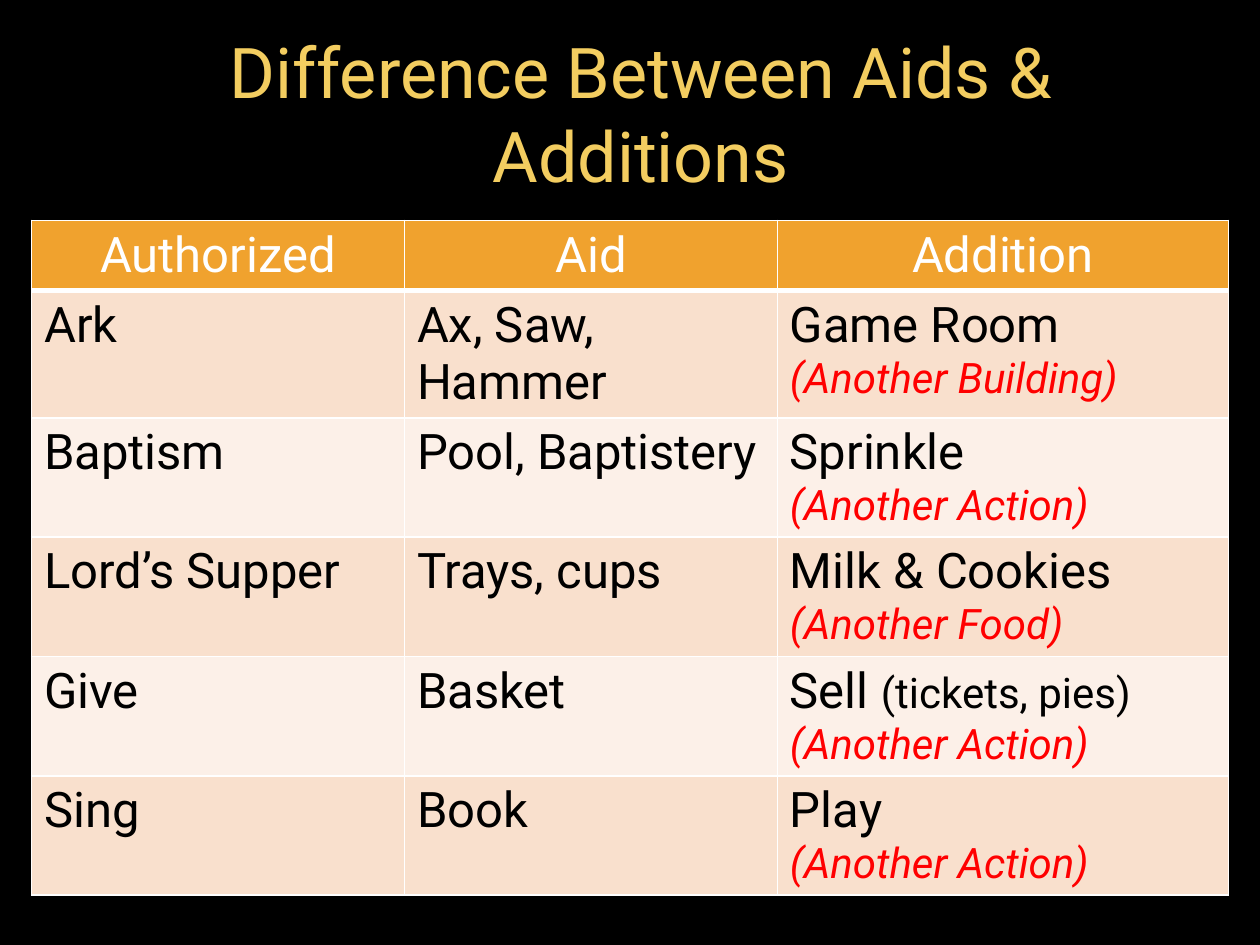
from dataclasses import dataclass

from lxml.etree import SubElement
from pptx import Presentation
from pptx.dml.color import RGBColor as RGB
from pptx.enum.text import MSO_ANCHOR as ANCHOR, MSO_AUTO_SIZE as FIT, PP_ALIGN as ALIGN
from pptx.oxml.ns import qn
from pptx.util import Inches, Pt


@dataclass(frozen=True)
class Theme:
    """Colours, font and type sizes of the slide."""
    font: str = "Roboto"
    back: str = "000000"
    title: str = "F3CD60"
    header: str = "F0A22E"
    bands: tuple = ("F9E0CD", "FCF0E8")
    light: str = "FFFFFF"
    dark: str = "000000"
    accent: str = "FF0000"
    title_size: int = 40
    body_size: int = 28
    note_size: int = 24


THEME = Theme()
TITLE = "Difference Between Aids & Additions"
HEADERS = ("Authorized", "Aid", "Addition")
ROWS = (
    ("Ark", "Ax, Saw, Hammer", "Game Room", "", "(Another Building)"),
    ("Baptism", "Pool, Baptistery", "Sprinkle", "", "(Another Action)"),
    ("Lord’s Supper", "Trays, cups", "Milk & Cookies", "", "(Another Food)"),
    ("Give", "Basket", "Sell ", "(tickets, pies)", "(Another Action)"),
    ("Sing", "Book", "Play", "", "(Another Action)"),
)
COL_WIDTHS = (2.96, 2.96, 3.58)
ROW_HEIGHTS = (0.54, 0.99) + (0.93,) * 4


def add_run(p, text, size, color, italic=False):
    """Append a formatted run to a paragraph."""
    r = p.add_run()
    r.text = text
    r.font.name, r.font.size = THEME.font, Pt(size)
    r.font.bold, r.font.italic = False, italic
    r.font.color.rgb = RGB.from_string(color)


def style_cell(cell, fill, bottom=1):
    """Give a cell its white borders and its fill."""
    tc_pr = cell._tc.get_or_add_tcPr()
    for side, width in (("L", 1), ("R", 1), ("T", 1), ("B", bottom)):
        ln = SubElement(tc_pr, qn(f"a:ln{side}"), w=str(Pt(width)))
        SubElement(SubElement(ln, qn("a:solidFill")), qn("a:srgbClr"), val=THEME.light)
    cell.fill.solid()
    cell.fill.fore_color.rgb = RGB.from_string(fill)


def add_title(s, box):
    """Place the centred title in the box."""
    tf = s.shapes.add_textbox(*box).text_frame
    tf.word_wrap, tf.auto_size = True, FIT.SHAPE_TO_FIT_TEXT
    tf.vertical_anchor = ANCHOR.MIDDLE
    p = tf.paragraphs[0]
    p.alignment = ALIGN.CENTER
    add_run(p, TITLE, THEME.title_size, THEME.title)


def add_comparison(s, box):
    """Place the comparison table, sharing the box by column and row weights."""
    left, top, width, height = box
    table = s.shapes.add_table(len(ROW_HEIGHTS), len(COL_WIDTHS), *box).table
    for col, share in zip(table.columns, COL_WIDTHS):
        col.width = int(width * share / sum(COL_WIDTHS))
    for row, share in zip(table.rows, ROW_HEIGHTS):
        row.height = int(height * share / sum(ROW_HEIGHTS))
    for cell, text in zip(table.rows[0].cells, HEADERS):
        style_cell(cell, THEME.header, bottom=3)
        p = cell.text_frame.paragraphs[0]
        p.alignment = ALIGN.CENTER
        add_run(p, text, THEME.body_size, THEME.light)
    for i, (*texts, detail, note) in enumerate(ROWS):
        cells = list(table.rows[i + 1].cells)
        for cell, text in zip(cells, texts):
            style_cell(cell, THEME.bands[i % 2])
            add_run(cell.text_frame.paragraphs[0], text, THEME.body_size, THEME.dark)
        tf = cells[-1].text_frame
        if detail:
            add_run(tf.paragraphs[0], detail, THEME.note_size, THEME.dark)
        add_run(tf.add_paragraph(), note, THEME.note_size, THEME.accent, italic=True)


def main():
    """Build and save the slide."""
    prs = Presentation()
    prs.slide_width, prs.slide_height = Inches(10), Inches(7.5)
    s = prs.slides.add_slide(prs.slide_layouts[6])
    s.background.fill.solid()
    s.background.fill.fore_color.rgb = RGB.from_string(THEME.back)
    w, h = prs.slide_width, prs.slide_height
    add_comparison(s, (int(w * 0.025), int(h * 0.2333), int(w * 0.95), int(h * 0.7)))
    add_title(s, (int(w * 0.1), int(h * 0.0227), int(w * 0.817), int(h * 0.1933)))
    prs.save("out.pptx")


if __name__ == "__main__":
    main()
